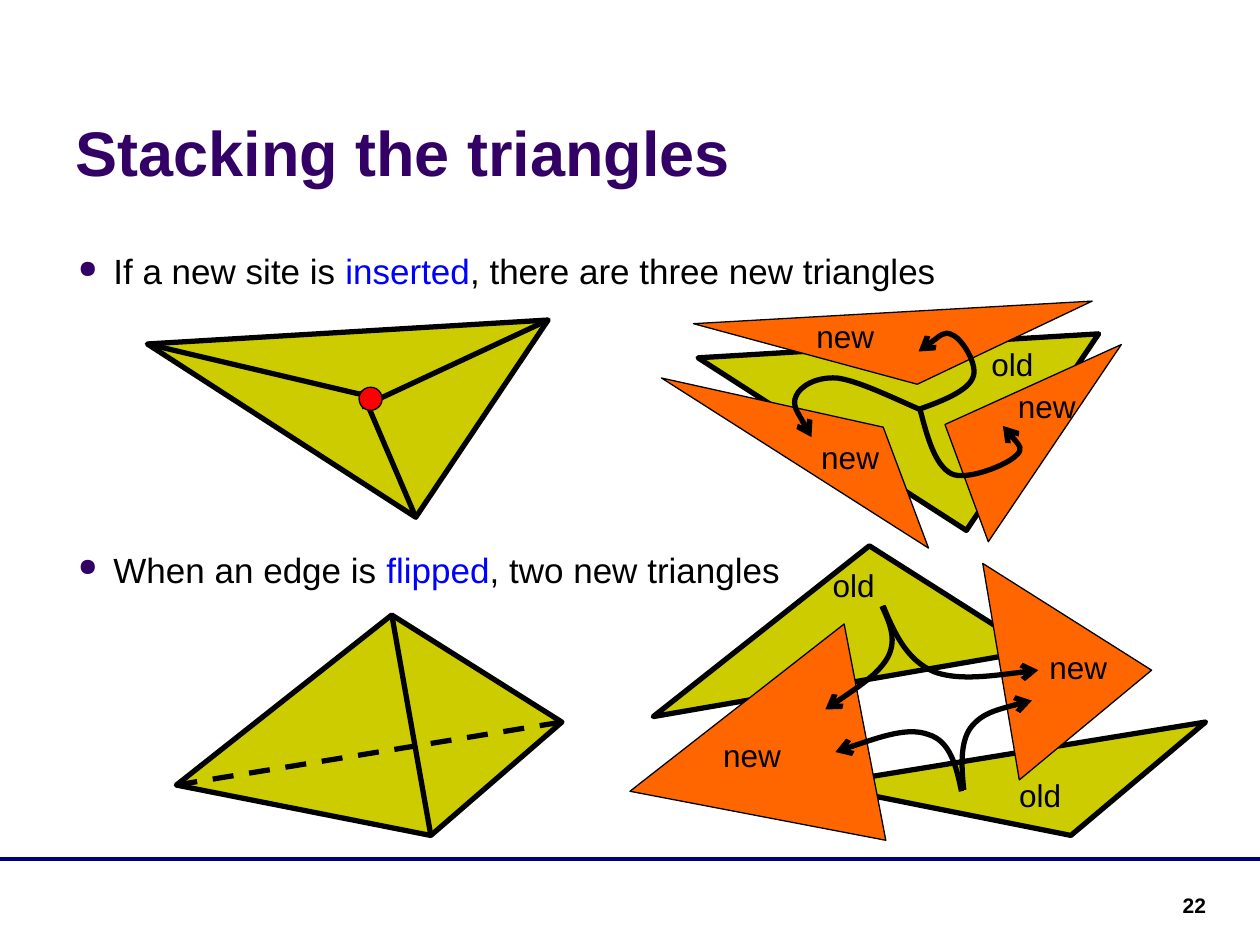
from lxml import etree
from pptx import Presentation
from pptx.dml.color import RGBColor
from pptx.enum.dml import MSO_LINE
from pptx.enum.shapes import MSO_CONNECTOR, MSO_SHAPE
from pptx.enum.text import MSO_ANCHOR, MSO_AUTO_SIZE, PP_ALIGN
from pptx.oxml.ns import qn
from pptx.util import Pt

STRAIGHT = MSO_CONNECTOR.STRAIGHT
OVAL = MSO_SHAPE.OVAL
DASH = MSO_LINE.DASH
BOTTOM = MSO_ANCHOR.BOTTOM
NO_AUTOFIT = MSO_AUTO_SIZE.NONE
LEFT, RIGHT = PP_ALIGN.LEFT, PP_ALIGN.RIGHT

FONT = "Arial"
BLACK, BLUE, NAVY, PURPLE = "000000", "0000FF", "000080", "330066"
OLD, NEW, RED = "CCCC00", "FF6600", "FF0000"
rgb = RGBColor.from_string

prs = Presentation()
prs.slide_width, prs.slide_height = Pt(720), Pt(540)
slide = prs.slides.add_slide(prs.slide_layouts[5])
shapes = slide.shapes


def add_run(paragraph, text, size, color=BLACK, bold=False):
    run = paragraph.add_run()
    run.text = text
    run.font.name, run.font.size, run.font.bold = FONT, Pt(size), bold
    run.font.color.rgb = rgb(color)


def add_outline(points, weight, fill=None):
    """Draw a closed polygon when a fill is given, else an open outline."""
    corners = [(Pt(x), Pt(y)) for x, y in points]
    builder = shapes.build_freeform(*corners[0])
    builder.add_line_segments(corners[1:], close=fill is not None)
    outline = builder.convert_to_shape()
    outline.shadow.inherit = False
    if fill:
        outline.fill.solid()
        outline.fill.fore_color.rgb = rgb(fill)
    else:
        outline.fill.background()
    outline.line.color.rgb = rgb(BLACK)
    outline.line.width = Pt(weight)
    return outline


# Title
title = shapes.title
title.left, title.top, title.width, title.height = Pt(36), Pt(9.4), Pt(669.6), Pt(102.2)
title.text_frame.auto_size = NO_AUTOFIT
title.text_frame.vertical_anchor = BOTTOM
heading = title.text_frame.paragraphs[0]
heading.alignment = LEFT
add_run(heading, "Stacking the triangles", 36, PURPLE, True)

# Bulleted statements, with room for the first drawing between them
statements = [
    ("If a new site is ", "inserted", ", there are three new triangles", 0),
    ("When an edge is ", "flipped", ", two new triangles", 146.7),
]
body = shapes.add_textbox(Pt(36), Pt(142.5), Pt(650), Pt(194)).text_frame
body.word_wrap = True
body.margin_left = body.margin_right = body.margin_top = body.margin_bottom = 0
for number, (before, keyword, after, gap) in enumerate(statements):
    statement = body.add_paragraph() if number else body.paragraphs[0]
    statement.space_before = Pt(gap)
    props = statement._p.get_or_add_pPr()
    props.set("marL", str(Pt(28.8)))
    props.set("indent", str(-Pt(20.2)))
    bullet_color = etree.SubElement(props, qn("a:buClr"))
    etree.SubElement(bullet_color, qn("a:srgbClr"), val=PURPLE)
    etree.SubElement(props, qn("a:buSzPct"), val="70000")
    etree.SubElement(props, qn("a:buChar"), char="●")
    add_run(statement, before, 20)
    add_run(statement, keyword, 20, BLUE)
    add_run(statement, after, 20)

# Triangles before and after each change, from back to front
polygons = [
    (OLD, [(84.2, 196.6), (237.6, 295.6), (313.2, 182.9)]),
    (OLD, [(100.8, 448.6), (223.9, 351.4), (321.1, 412.6), (246.2, 477.4)]),
    (OLD, [(398.9, 204.5), (552.2, 303.1), (627.8, 190.8)]),
    (NEW, [(540, 242.6), (640.8, 196.9), (564.8, 309.6)]),
    (NEW, [(396.3, 185), (624.1, 172.1), (524.2, 219.6)]),
    (NEW, [(378, 216), (530.6, 313.2), (504.7, 244.1)]),
    (OLD, [(373.3, 409.5), (496.8, 311.9), (591.1, 371.8)]),
    (OLD, [(468, 448.6), (689, 412.6), (612, 477.4)]),
    (NEW, [(482.4, 356.6), (360, 452.2), (506.2, 480.2)]),
    (NEW, [(561.6, 322), (658.1, 383), (582.5, 445.7)]),
]
for fill, corners in polygons:
    add_outline(corners, 3 if fill == OLD else 0.75, fill)

# Footer rule, the three edges to the new site, and the flipped edge
straight_lines = [
    (0, 491, 720, 491, NAVY, 2, None),
    (84.2, 196.6, 218.2, 228.2, BLACK, 3, None),
    (313.2, 182.9, 206.6, 232.6, BLACK, 3, None),
    (237.6, 295.6, 206.6, 223.2, BLACK, 3, None),
    (100.8, 448.6, 321.1, 412.6, BLACK, 3, DASH),
    (223.9, 351.4, 246.2, 477.4, BLACK, 3, None),
]
for x1, y1, x2, y2, color, weight, dash in straight_lines:
    edge = shapes.add_connector(STRAIGHT, Pt(x1), Pt(y1), Pt(x2), Pt(y2))
    edge.line.color.rgb = rgb(color)
    edge.line.width = Pt(weight)
    if dash:
        edge.line.dash_style = dash
    etree.SubElement(edge._element.spPr, qn("a:effectLst"))

site = shapes.add_shape(OVAL, Pt(205.2), Pt(221.3), Pt(13.2), Pt(13.2))
site.shadow.inherit = False
site.fill.solid()
site.fill.fore_color.rgb = rgb(RED)
site.line.color.rgb = rgb(BLACK)
site.line.width = Pt(0.75)

# Curved arrows from old to new: a start, then two controls and an end per curve
arrows = [
    [(524.9, 234), (539.3, 229), (553, 223.2), (555.8, 216), (559.4, 209.5),
     (550.1, 193.7), (544.3, 191.5), (539.3, 188.6), (524.9, 200.9), (524.9, 200.9)],
    [(525.6, 233.3), (529.9, 249.8), (534.2, 265.7), (543.6, 270.7), (552.2, 275),
     (575.3, 265.7), (580.3, 260.6), (585.4, 256.3), (578.9, 249.8), (573.1, 243.4)],
    [(525.6, 234), (507.6, 226.1), (489.6, 217.4), (478.1, 216), (465.8, 215.3),
     (457.2, 221), (455, 226.1), (452.2, 231.8), (463.7, 249.8), (463.7, 249.8)],
    [(504, 346.3), (508.3, 355.7), (512.6, 365), (507.6, 375.1),
     (502.6, 384.5), (486.7, 395.3), (471.6, 405.4)],
    [(504.7, 346.3), (511.2, 362.2), (518.4, 377.3), (533.5, 383.8),
     (547.9, 389.5), (593.3, 383), (593.3, 383)],
    [(549.4, 452.2), (546.5, 437.8), (542.9, 423.4), (530.6, 419.8),
     (519.1, 415.4), (498.2, 422.6), (477.4, 429.8)],
    [(550.8, 451.4), (549.4, 438.5), (548.6, 424.8), (554.4, 416.2),
     (560.9, 407.5), (575.3, 403.9), (589.7, 400.3)],
]
for points in arrows:
    arrow = add_outline(points, 3)
    segments = list(arrow._element.iter(qn("a:lnTo")))
    for first in range(0, len(segments), 3):
        curve = etree.Element(qn("a:cubicBezTo"))
        segments[first].addprevious(curve)
        for segment in segments[first:first + 3]:
            curve.append(segment[0])
            segment.getparent().remove(segment)
    etree.SubElement(arrow.line._get_or_add_ln(), qn("a:tailEnd"), type="arrow")

# Triangle labels
labels = [
    ("old", 559.4, 193.7), ("new", 574.6, 217.4), ("new", 462.2, 247),
    ("new", 459.4, 177.8), ("old", 575.3, 439.9), ("new", 592.6, 366.5),
    ("old", 468.7, 319.7), ("new", 406.1, 416.9),
]
for word, x, y in labels:
    label = shapes.add_textbox(Pt(x), Pt(y), Pt(59), Pt(28.8)).text_frame
    label.word_wrap = True
    add_run(label.paragraphs[0], word, 18)

# Page number
page = shapes.add_textbox(Pt(601.2), Pt(506.2), Pt(95), Pt(20.2)).text_frame
page.word_wrap = True
page.paragraphs[0].alignment = RIGHT
add_run(page.paragraphs[0], "22", 12, bold=True)

prs.save("out.pptx")
